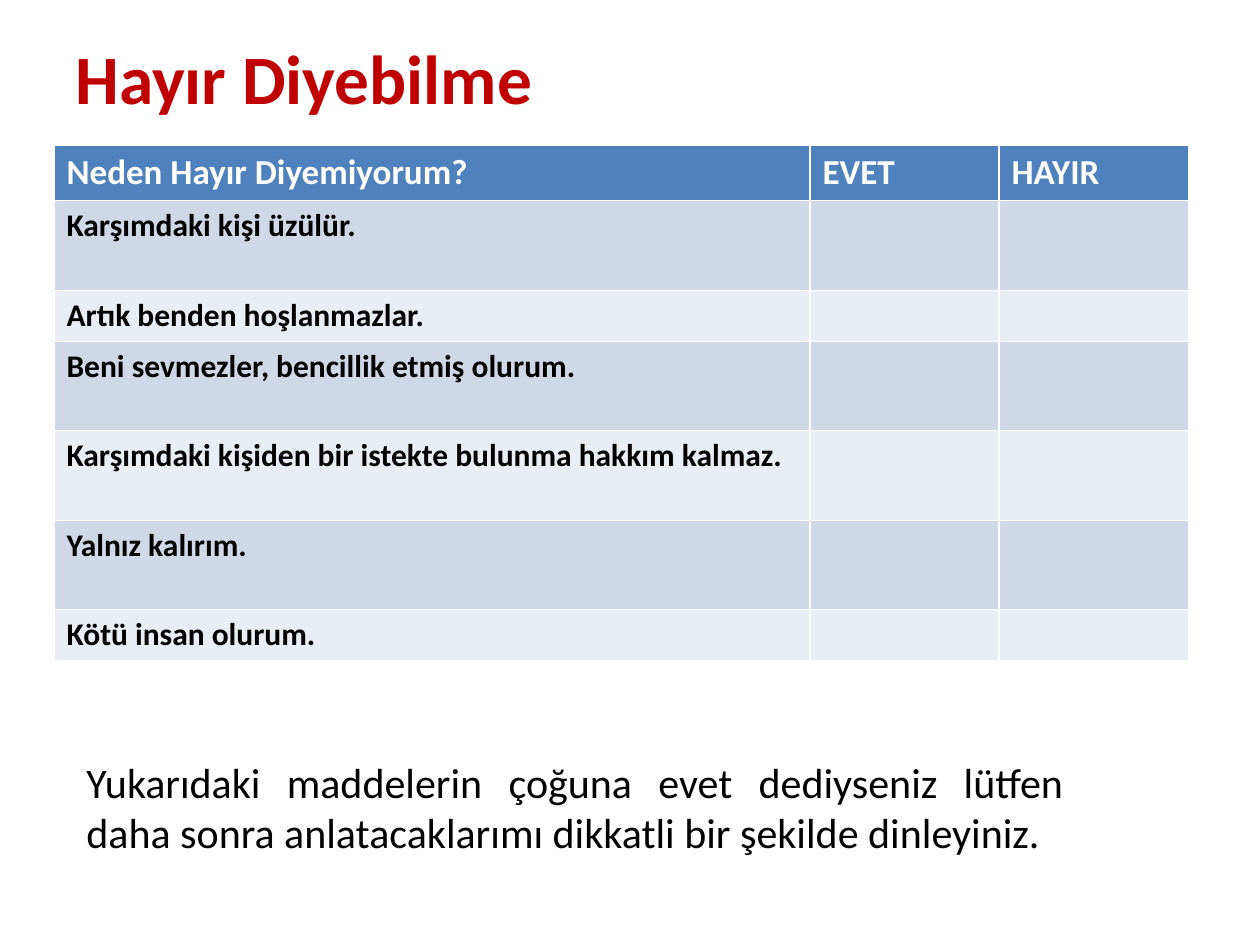
from dataclasses import dataclass

from pptx import Presentation
from pptx.dml.color import RGBColor
from pptx.enum.text import MSO_ANCHOR, MSO_AUTO_SIZE, PP_ALIGN
from pptx.slide import Slide
from pptx.text.text import TextFrame
from pptx.util import Emu, Pt

LEFT = PP_ALIGN.LEFT
JUSTIFY = PP_ALIGN.JUSTIFY
MIDDLE = MSO_ANCHOR.MIDDLE
TOP = MSO_ANCHOR.TOP
NO_AUTOFIT = MSO_AUTO_SIZE.NONE

PX_PER_INCH = 126
FONT = "Calibri"
RED = "C00000"
BLACK = "000000"
WHITE = "FFFFFF"
HEADER_BLUE = "4F81BD"
BANDS = ("D0D8E8", "E9EDF4")
COLUMN_WIDTHS = (756, 189, 190)


@dataclass(frozen=True)
class Row:
    labels: tuple[str, ...]
    height: int


HEADER = Row(("Neden Hayır Diyemiyorum?", "EVET", "HAYIR"), 54)
REASONS = (
    Row(("Karşımdaki kişi üzülür.", "", ""), 90),
    Row(("Artık benden hoşlanmazlar.", "", ""), 51),
    Row(("Beni sevmezler, bencillik etmiş olurum.", "", ""), 89),
    Row(("Karşımdaki kişiden bir istekte bulunma hakkım kalmaz.", "", ""), 90),
    Row(("Yalnız kalırım.", "", ""), 89),
    Row(("Kötü insan olurum.", "", ""), 51),
)


def px(length: int) -> Emu:
    return Emu(round(length * 914400 / PX_PER_INCH))


def color(value: str) -> RGBColor:
    return RGBColor.from_string(value)


def write(frame: TextFrame, text: str, *, size: float, ink: str = BLACK,
          bold: bool = False, align: PP_ALIGN = LEFT,
          anchor: MSO_ANCHOR = TOP) -> None:
    frame.word_wrap = True
    frame.vertical_anchor = anchor
    paragraph = frame.paragraphs[0]
    paragraph.alignment = align
    paragraph.font.size = Pt(size)
    if not text:
        return
    run = paragraph.add_run()
    run.text = text
    run.font.name = FONT
    run.font.size = Pt(size)
    run.font.bold = bold
    run.font.color.rgb = color(ink)


def add_heading(slide: Slide) -> None:
    heading = slide.shapes.title
    heading.left, heading.top = px(63), px(38)
    heading.width, heading.height = px(1134), px(77)
    heading.text_frame.auto_size = NO_AUTOFIT
    write(heading.text_frame, "Hayır Diyebilme", size=39.6, ink=RED,
          bold=True, anchor=MIDDLE)


def add_checklist(slide: Slide) -> None:
    rows = (HEADER, *REASONS)
    checklist = slide.shapes.add_table(
        len(rows), len(COLUMN_WIDTHS), px(54), px(145),
        px(sum(COLUMN_WIDTHS)), px(sum(row.height for row in rows)),
    ).table
    for column, width in zip(checklist.columns, COLUMN_WIDTHS):
        column.width = px(width)
    for index, row in enumerate(rows):
        is_header = index == 0
        checklist.rows[index].height = px(row.height)
        fill = HEADER_BLUE if is_header else BANDS[(index - 1) % 2]
        for cell, label in zip(checklist.rows[index].cells, row.labels):
            cell.fill.solid()
            cell.fill.fore_color.rgb = color(fill)
            write(cell.text_frame, label, size=20 if is_header else 18,
                  ink=WHITE if is_header else BLACK, bold=True)


def add_advice(slide: Slide) -> None:
    advice = slide.shapes.add_textbox(px(74), px(750), px(1002), px(115))
    write(advice.text_frame,
          "Yukarıdaki maddelerin çoğuna evet dediyseniz lütfen daha sonra "
          "anlatacaklarımı dikkatli bir şekilde dinleyiniz.",
          size=24, align=JUSTIFY)


def main() -> None:
    deck = Presentation()
    deck.slide_width, deck.slide_height = px(1260), px(945)
    slide = deck.slides.add_slide(deck.slide_layouts[5])
    add_heading(slide)
    add_checklist(slide)
    add_advice(slide)
    deck.save("out.pptx")


if __name__ == "__main__":
    main()
